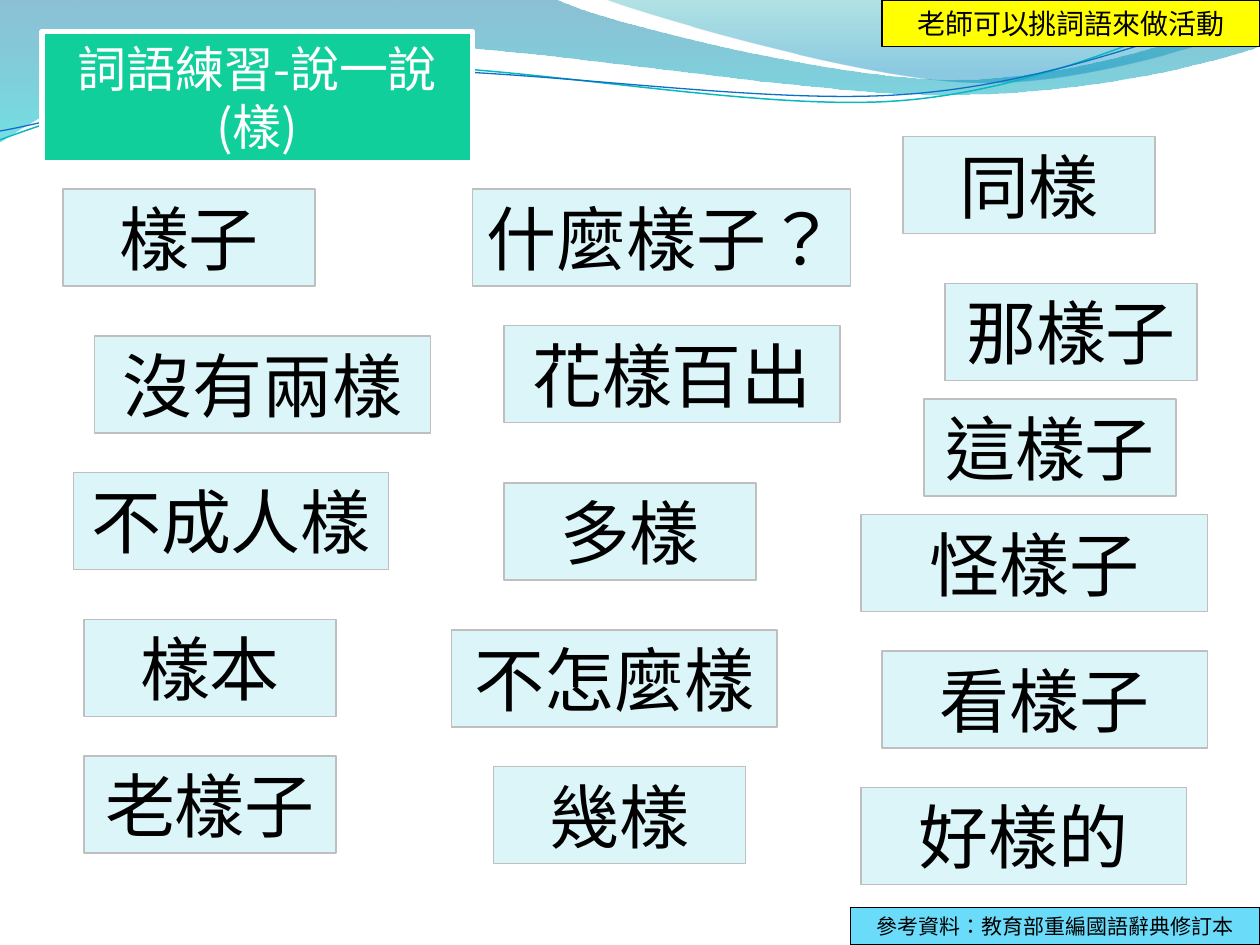
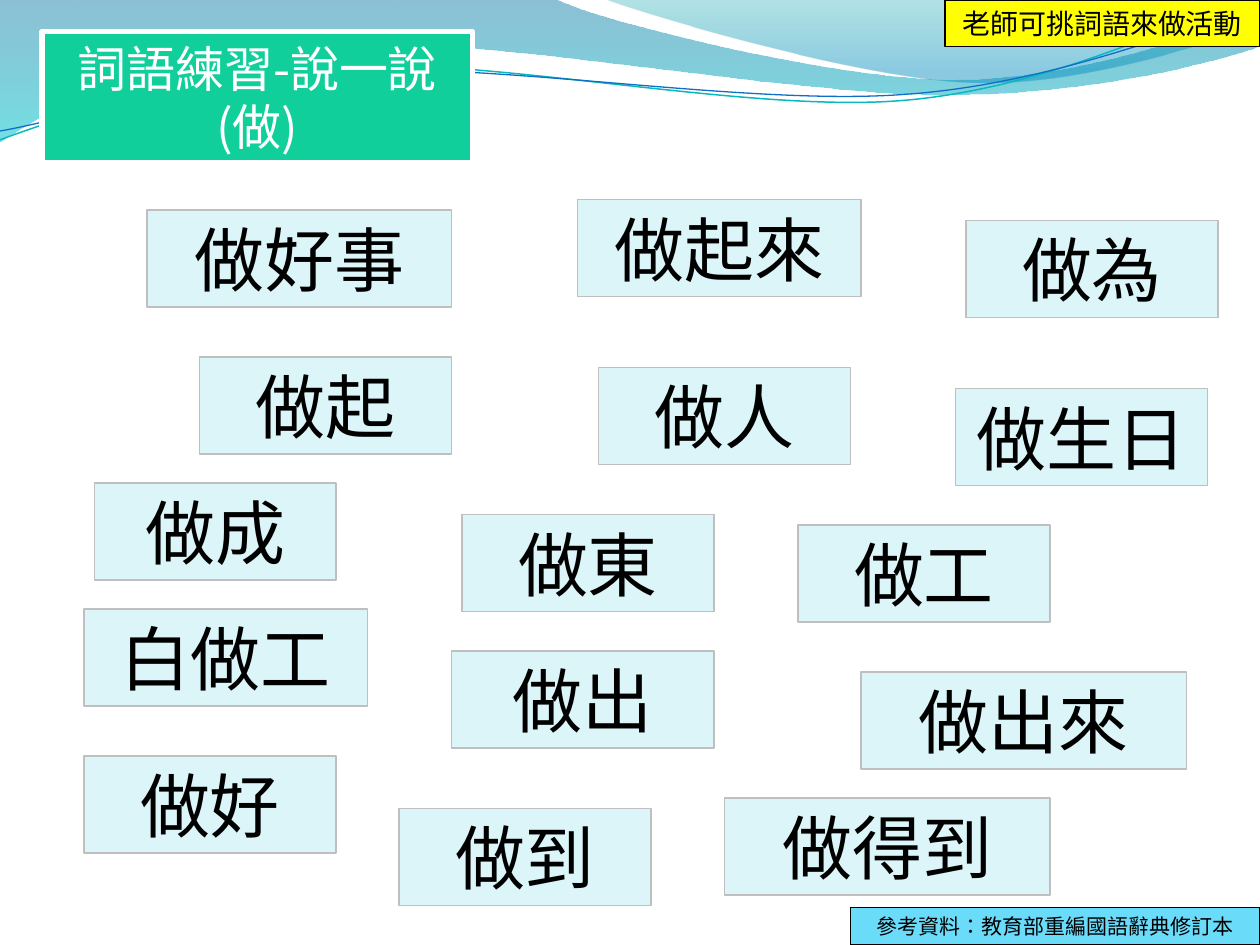
from math import cos, radians, sin

from lxml import etree
from pptx import Presentation
from pptx.dml.color import RGBColor
from pptx.enum.lang import MSO_LANGUAGE_ID
from pptx.enum.shapes import MSO_SHAPE
from pptx.enum.text import MSO_ANCHOR, MSO_AUTO_SIZE, PP_ALIGN
from pptx.oxml.ns import qn
from pptx.util import Inches, Pt

RECT = MSO_SHAPE.RECTANGLE
CENTER = PP_ALIGN.CENTER
MIDDLE = MSO_ANCHOR.MIDDLE
GROW = MSO_AUTO_SIZE.SHAPE_TO_FIT_TEXT
CHINESE = MSO_LANGUAGE_ID.TRADITIONAL_CHINESE

WIDTH, HEIGHT = 10, 7.5
UNIT = 1 / 12  # grid step in inches
CARD_HEIGHT = 0.77
TILT = 2.7  # degrees by which the thin curves lean to the left
FONT = "Noto Sans CJK SC"
COLORS = {
    "card": "DBF5F9", "card_line": "BFBFBF", "title": "10CF9B",
    "tip": "FFFF00", "source": "6BDBFA", "black": "000000", "white": "FFFFFF",
    "wave_top": "0074A1", "wave_bottom": "00C6CF",
    "crest_top": "00A1A9", "crest_bottom": "008BBF",
    "teal": "0AB8BF", "blue": "0F6FC6",
}
SOURCE = "參考資料：教育部重編國語辭典修訂本"

# Outlines in inches: a pair is a straight step, six numbers are a Bezier step
WAVE = [(0, 0), (4.4, -0.01), (4.76, 0.17, 6.64, 0.63, 7.58, 0.63),
        (8.53, 0.63, 9.58, 0.26, 10, 0.09), (10.01, 0.36),
        (9.83, 0.44, 8.7, 0.76, 7.46, 0.75), (6.22, 0.75, 3.82, 0.28, 2.57, 0.34),
        (1.29, 0.36, 0.46, 0.83, -0.01, 1.13)]
CREST = [(4.79, -0.01), (5.09, 0.11, 6.82, 0.62, 7.69, 0.65),
         (8.56, 0.69, 9.61, 0.32, 10, 0.21), (10, 0)]
TEAL_LINE = [(0, 1.11), (0.48, 0.93, 1.58, 0.57, 2.77, 0.52),
             (3.95, 0.47, 5.93, 0.89, 7.13, 0.8), (8.33, 0.71, 9.38, 0.15, 9.98, -0.02)]
BLUE_LINE = [(0, 1.04), (0.47, 0.96, 1.64, 0.61, 2.83, 0.56),
             (4.03, 0.51, 5.97, 0.84, 7.17, 0.75), (8.36, 0.67, 9.41, 0.21, 10, 0.06)]

# Each word card: text, left, top and width in grid units
SLIDES = [
    {"word": "樣", "tip": "老師可以挑詞語來做活動", "tip_width": 36, "cards": [
        ("樣子", 6, 18, 24), ("沒有兩樣", 9, 32, 32), ("不成人樣", 7, 45, 30),
        ("樣本", 8, 59, 24), ("老樣子", 8, 72, 24),
        ("什麼樣子？", 45, 18, 36), ("花樣百出", 48, 31, 32), ("多樣", 48, 46, 24),
        ("不怎麼樣", 43, 60, 31), ("幾樣", 47, 73, 24),
        ("同樣", 86, 13, 24), ("那樣子", 90, 27, 24), ("這樣子", 88, 38, 24),
        ("怪樣子", 82, 49, 33), ("看樣子", 84, 62, 31), ("好樣的", 82, 75, 31)]},
    {"word": "做", "tip": "老師可挑詞語來做活動", "tip_width": 30, "cards": [
        ("做好事", 14, 20, 29), ("做起", 19, 34, 24), ("做成", 9, 46, 23),
        ("白做工", 8, 58, 27), ("做好", 8, 72, 24),
        ("做起來", 55, 19, 27), ("做人", 57, 35, 24), ("做東", 44, 49, 24),
        ("做出", 43, 62, 25), ("做到", 38, 77, 24),
        ("做為", 92, 21, 24), ("做生日", 91, 37, 24), ("做工", 76, 50, 24),
        ("做出來", 82, 64, 31), ("做得到", 69, 76, 31)]},
]


def rgb(name):
    return RGBColor.from_string(COLORS[name])


def turn(outline, degrees, cx, cy):
    """Turn every point of an outline clockwise about a centre."""
    c, d = cos(radians(degrees)), sin(radians(degrees))
    turned = []
    for step in outline:
        points = [(x - cx, y - cy) for x, y in zip(step[::2], step[1::2])]
        turned.append(tuple(v for x, y in points
                            for v in (cx + x * c - y * d, cy + x * d + y * c)))
    return turned


def add_outline(s, outline, close):
    """Draw the outline, then join each three points of a curve step."""
    points = [(Inches(x), Inches(y)) for step in outline
              for x, y in zip(step[::2], step[1::2])]
    builder = s.shapes.build_freeform(*points[0])
    builder.add_line_segments(points[1:], close=close)
    sp = builder.convert_to_shape()
    sp.shadow.inherit = False
    lines = iter(list(sp.element.spPr.iter(qn("a:lnTo"))))
    for step in outline[1:]:
        nodes = [next(lines) for _ in range(len(step) // 2)]
        if len(nodes) == 3:
            curve = nodes[0].makeelement(qn("a:cubicBezTo"))
            nodes[0].addprevious(curve)
            for node in nodes:
                curve.append(node[0])
                node.getparent().remove(node)
    return sp


def add_wave(s, outline, *stops):
    """Fill an outline from top to bottom; a stop is position, colour, opacity."""
    sp = add_outline(s, outline, True)
    sp.line.fill.background()
    sp.fill.gradient()
    sp.fill.gradient_angle = 270
    for stop, (position, color, _) in zip(sp.fill.gradient_stops, stops):
        stop.position = position
        stop.color.rgb = rgb(color)
    nodes = list(sp.element.spPr.iter(qn("a:srgbClr")))
    for node, (_, _, opacity) in zip(nodes, stops):
        etree.SubElement(node, qn("a:alpha"), val=str(opacity * 1000))
    return sp


def add_curve(s, outline, color, width, middle):
    sp = add_outline(s, turn(outline, TILT, *middle), False)
    sp.rotation = 360 - TILT
    sp.fill.background()
    sp.line.color.rgb = rgb(color)
    sp.line.width = Pt(width)
    return sp


def write(tf, text, size, color="black"):
    tf.word_wrap = True
    tf.auto_size = GROW
    tf.vertical_anchor = MIDDLE
    p = tf.paragraphs[0]
    p.alignment = CENTER
    r = p.add_run()
    r.text = text
    r.font.size = Pt(size)
    r.font.name = FONT
    r.font.color.rgb = rgb(color)
    r.font.language_id = CHINESE
    for latin in list(p.runs[0].font._element.iter(qn("a:latin"))):
        latin.addnext(latin.makeelement(qn("a:ea"), {"typeface": FONT}))


def add_box(s, text, left, top, width, height, fill, size,
            line="black", line_width=0.75, color="black"):
    sp = s.shapes.add_shape(RECT, *map(Inches, (left, top, width, height)))
    sp.shadow.inherit = False
    sp.fill.solid()
    sp.fill.fore_color.rgb = rgb(fill)
    sp.line.color.rgb = rgb(line)
    sp.line.width = Pt(line_width)
    write(sp.text_frame, text, size, color)


def decorate_master(prs, s):
    """Draw the shared waves on a slide and move them to the master."""
    waves = [
        add_wave(s, WAVE, (0, "wave_top", 45), (1, "wave_bottom", 55)),
        add_wave(s, CREST, (0, "crest_top", 30), (0.8, "crest_bottom", 45)),
        add_curve(s, TEAL_LINE, "teal", 0.85, (4.99, 0.57)),
        add_curve(s, BLUE_LINE, "blue", 0.75, (5, 0.59)),
    ]
    tree = prs.slide_master.shapes.element
    for number, sp in enumerate(waves):
        sp.element.nvSpPr.cNvPr.set("id", str(20 + number))
        tree.insert(2 + number, sp.element)


def fill_slide(s, word, tip, tip_width, cards):
    for text, left, top, width in cards:
        add_box(s, text, left * UNIT, top * UNIT, width * UNIT, CARD_HEIGHT,
                "card", 40, line="card_line")
    add_box(s, f"詞語練習-說一說({word})", 4 * UNIT, 3 * UNIT, 41 * UNIT, 1.04,
            "title", 28, line="white", line_width=3, color="white")
    # Corner notes sit flush with the right edge
    add_box(s, tip, WIDTH - tip_width * UNIT, 0, tip_width * UNIT, 0.37, "tip", 16)
    add_box(s, SOURCE, WIDTH - 39 * UNIT, HEIGHT - 0.3, 39 * UNIT, 0.3, "source", 12)


def main():
    prs = Presentation()
    prs.slide_width, prs.slide_height = Inches(WIDTH), Inches(HEIGHT)
    slides = [prs.slides.add_slide(prs.slide_layouts[6]) for _ in SLIDES]
    decorate_master(prs, slides[0])
    for s, content in zip(slides, SLIDES):
        fill_slide(s, **content)
    prs.save("out.pptx")


if __name__ == "__main__":
    main()
